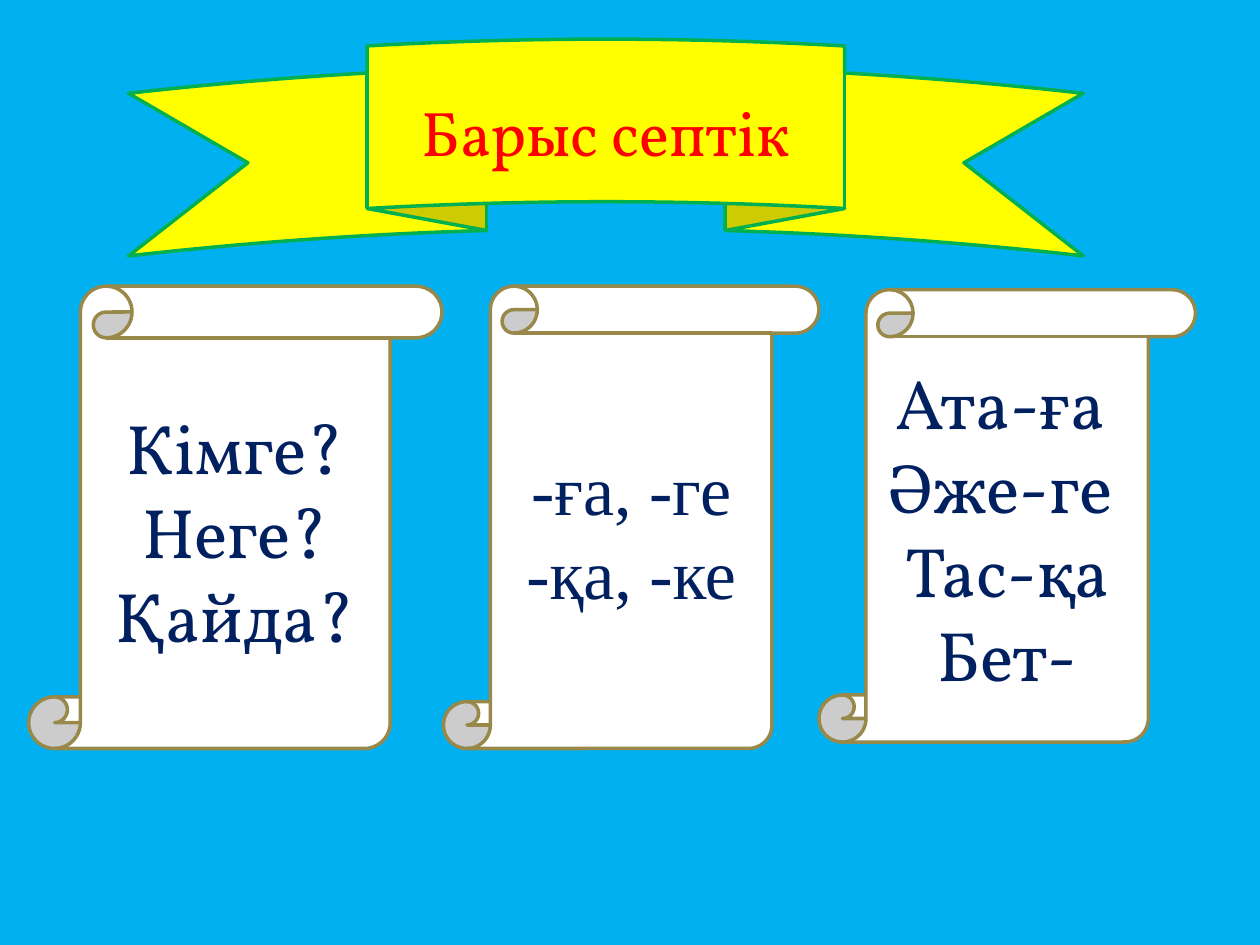
"""Build a slide on the dative case: a ribbon title above three scrolls."""
import pptx
import pptx.dml.color
import pptx.enum.shapes
import pptx.enum.text
import pptx.util

HUES = {"sky": "00B0F0", "sun": "FFFF00", "leaf": "00B050", "red": "FF0000",
        "white": "FFFFFF", "tan": "98894B", "navy": "002060"}
FORMS = pptx.enum.shapes.MSO_SHAPE
Cm = pptx.util.Cm


def hue(name):
    return pptx.dml.color.RGBColor.from_string(HUES[name])


def write(frame, text, font="Vollkorn", size=40, color="navy"):
    frame.word_wrap = True
    frame.vertical_anchor = pptx.enum.text.MSO_ANCHOR.MIDDLE
    frame.text = text
    for para in frame.paragraphs:
        para.alignment = pptx.enum.text.PP_ALIGN.CENTER
        for run in para.runs:
            run.font.name = font
            run.font.size = pptx.util.Pt(size)
            run.font.color.rgb = hue(color)


class Page:
    def __init__(self, deck, back):
        self.slide = deck.slides.add_slide(deck.slide_layouts[5])
        self.width = pptx.util.Pt(2)
        fill = self.slide.background.fill
        fill.solid()
        fill.fore_color.rgb = hue(back)

    def shape(self, form, box, fill, line):
        item = self.slide.shapes.add_shape(form, *map(Cm, box))
        item.shadow.inherit = False
        item.fill.solid()
        item.fill.fore_color.rgb = hue(fill)
        item.line.color.rgb = hue(line)
        item.line.width = self.width
        return item

    def ribbon(self, box):
        self.shape(FORMS.CURVED_UP_RIBBON, box, "sun", "leaf")

    def title(self, box, text):
        item = self.slide.shapes.title
        item.left, item.top, item.width, item.height = map(Cm, box)
        write(item.text_frame, text, size=36, color="red")
        tree = self.slide.shapes.element
        tree.remove(item.element)
        tree.append(item.element)

    def scroll(self, box, lines, font="Vollkorn"):
        item = self.shape(FORMS.VERTICAL_SCROLL, box, "white", "tan")
        write(item.text_frame, "\n".join(lines), font=font)


def main():
    deck = pptx.Presentation()
    deck.slide_width, deck.slide_height = Cm(25.4), Cm(19.05)
    page = Page(deck, "sky")
    page.ribbon((2.59, 0.79, 19.25, 4.37))
    page.title((7.4, 1.05, 9.63, 3.2), "Барыс септік")
    page.scroll((0.58, 5.77, 8.33, 9.32), ("Кімге?", "Неге?", "Қайда?"))
    page.scroll((8.94, 5.77, 7.57, 9.32), ("-ға, -ге", "-қа, -ке"),
                font="Times New Roman")
    page.scroll((16.51, 5.84, 7.59, 9.12),
                ("Ата-ға ", "Әже-ге ", "Тас-қа", "Бет-"))
    deck.save("out.pptx")


if __name__ == "__main__":
    main()
